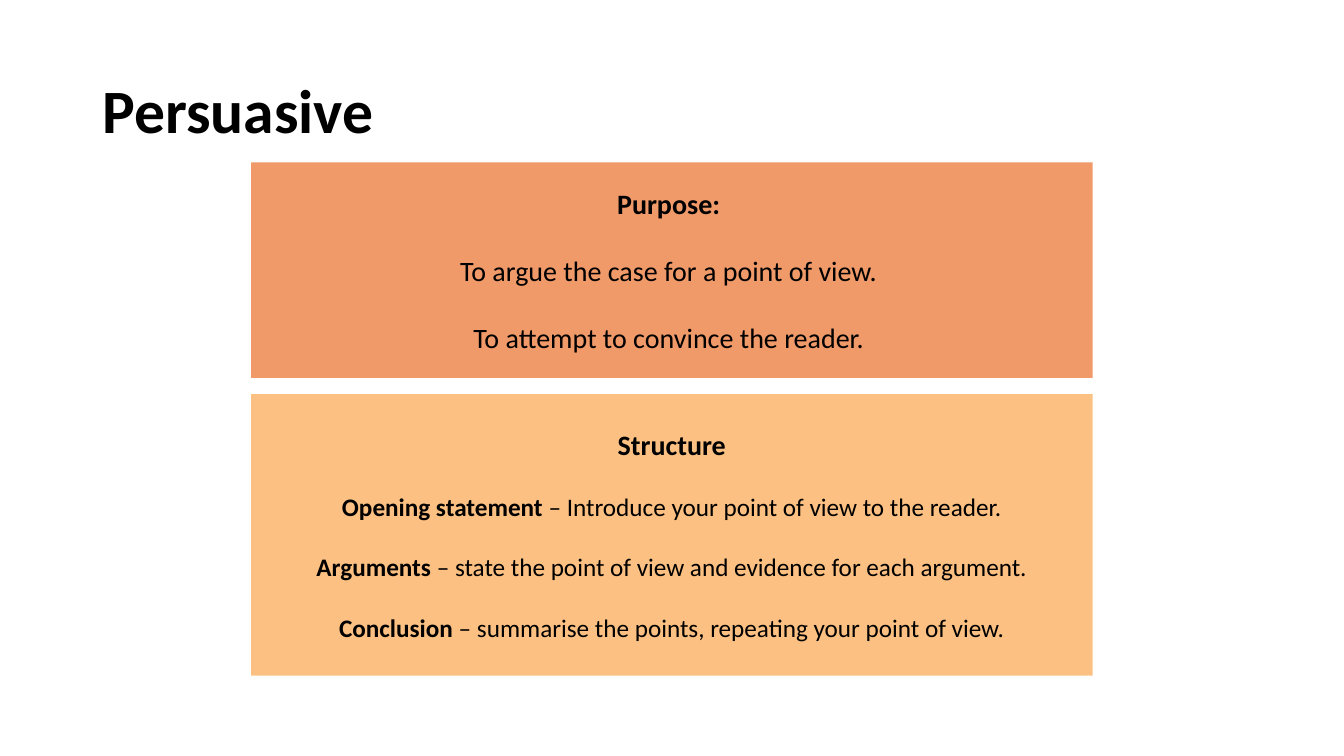
from dataclasses import dataclass

from lxml import etree
from pptx import Presentation
from pptx import util as u
from pptx.dml import color
from pptx.enum import shapes, text
from pptx.oxml import ns


@dataclass(frozen=True)
class Theme:
    font: str = "Calibri"
    ink: str = "000000"
    purpose: str = "EA6F2A"
    structure: str = "FCA84D"
    opacity: int = 70
    title_size: int = 44
    heading_size: int = 20
    detail_size: int = 18


def write_text(paragraph, content, *, theme, size, bold=False):
    run = paragraph.add_run()
    run.text = content
    run.font.name = theme.font
    run.font.size = u.Pt(size)
    run.font.bold = bold
    run.font.color.rgb = color.RGBColor.from_string(theme.ink)


class SlideBuilder:
    def __init__(self, slide, theme):
        self.slide = slide
        self.theme = theme

    def title(self, content, left, top, width, height):
        shape = self.slide.shapes.add_textbox(*map(u.Pt, (left, top, width, height)))
        frame = shape.text_frame
        frame.word_wrap = True
        frame.vertical_anchor = text.MSO_ANCHOR.MIDDLE
        paragraph = frame.paragraphs[0]
        paragraph.line_spacing = 0.9
        write_text(paragraph, content, theme=self.theme,
                   size=self.theme.title_size, bold=True)

    def panel(self, fill, lines, gap, left, top, width, height):
        """Each line is a list of (content, size, bold) runs."""
        shape = self.slide.shapes.add_shape(
            shapes.MSO_SHAPE.RECTANGLE, *map(u.Pt, (left, top, width, height)))
        shape.shadow.inherit = False
        shape.line.fill.background()
        shape.fill.solid()
        shape.fill.fore_color.rgb = color.RGBColor.from_string(fill)
        # Transparency of the fill
        tint = shape.fill._xPr.find(ns.qn("a:solidFill"))[0]
        etree.SubElement(tint, ns.qn("a:alpha"), val=str(self.theme.opacity * 1000))

        frame = shape.text_frame
        frame.word_wrap = True
        frame.vertical_anchor = text.MSO_ANCHOR.MIDDLE
        for index, runs in enumerate(lines):
            paragraph = frame.add_paragraph() if index else frame.paragraphs[0]
            paragraph.alignment = text.PP_ALIGN.CENTER
            if index:
                paragraph.space_before = u.Pt(gap)
            for content, size, bold in runs:
                write_text(paragraph, content, theme=self.theme, size=size, bold=bold)


def main():
    theme = Theme()
    presentation = Presentation()
    presentation.slide_width, presentation.slide_height = u.Pt(960), u.Pt(540)
    slide = presentation.slides.add_slide(presentation.slide_layouts[6])
    builder = SlideBuilder(slide, theme)
    heading, detail = theme.heading_size, theme.detail_size
    panel_left, panel_width = 179.3, 601.2

    # Title
    builder.title("Persuasive", 66, 28.8, 828, 104.4)

    # Purpose
    purpose = [
        [("Purpose: ", heading, True)],
        [("To argue the case for a point of view. ", heading, False)],
        [("To attempt to convince the reader. ", heading, False)],
    ]
    builder.panel(theme.purpose, purpose, 24, panel_left, 116, panel_width, 154)

    # Structure
    stages = [
        ("Opening statement ", "– Introduce your point of view to the reader."),
        ("Arguments", " – state the point of view and evidence for each argument."),
        ("Conclusion", " – summarise the points, repeating your point of view."),
    ]
    structure = [[("Structure", heading, True)]] + [
        [(name, detail, True), (advice, detail, False)] for name, advice in stages]
    builder.panel(theme.structure, structure, 21.6, panel_left, 281.6, panel_width, 201)

    presentation.save("out.pptx")


if __name__ == "__main__":
    main()
